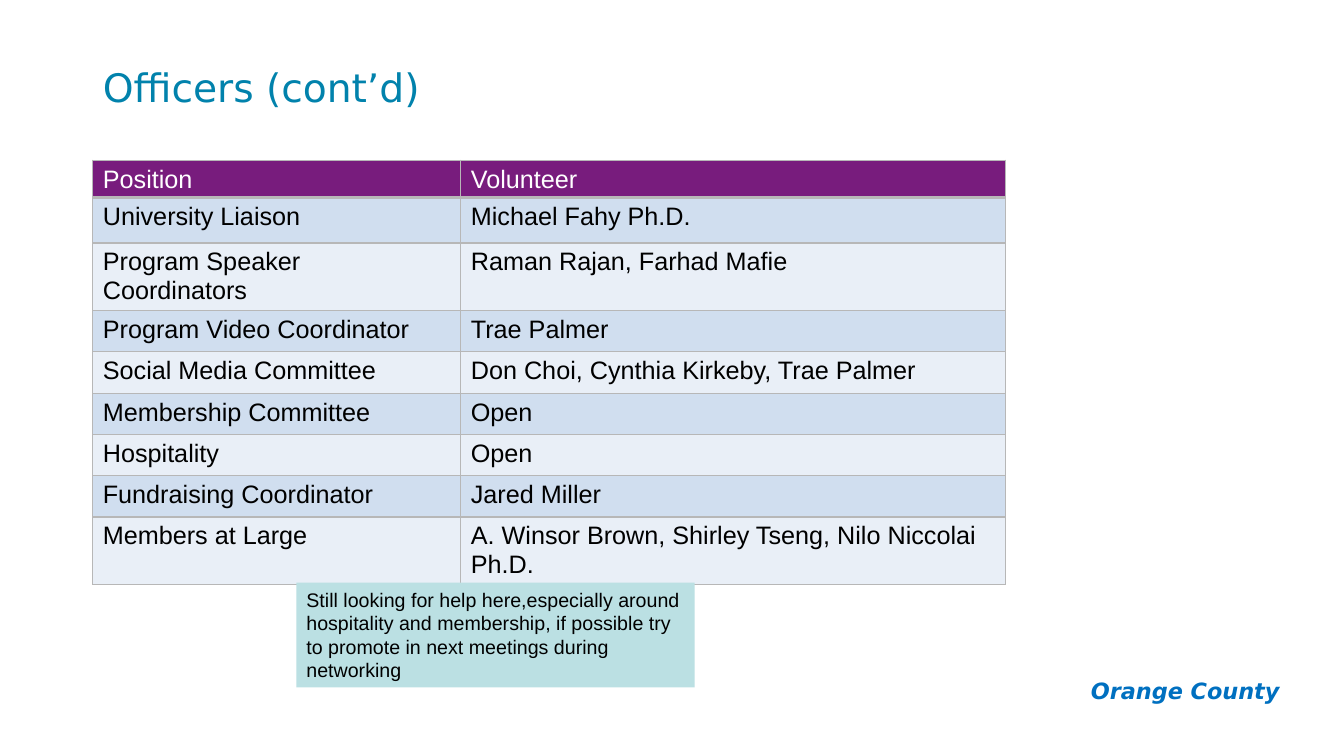
from lxml import etree
from pptx import Presentation
from pptx import util as u
from pptx.dml.color import RGBColor
from pptx.enum import shapes, text
from pptx.oxml import ns

WHITE = RGBColor(0xFF, 0xFF, 0xFF)
BLACK = RGBColor(0x00, 0x00, 0x00)
TEAL = RGBColor(0x01, 0x82, 0xAC)
BLUE = RGBColor(0x00, 0x70, 0xC0)
PURPLE = RGBColor(0x78, 0x1C, 0x7D)
BANDS = RGBColor(0xD0, 0xDE, 0xEF), RGBColor(0xE9, 0xEF, 0xF7)
NOTE_FILL = RGBColor(0xBB, 0xE0, 0xE3)
BORDER = RGBColor(0xB7, 0xB7, 0xB7)

LEFT = 0.92
COLUMN_WIDTHS = 3.65, 5.4
ROW_HEIGHTS = [0.36] + [0.45] * 2 + [0.41] * 6
CELL_BOTTOM_MARGIN = 0.02  # keeps the two-line rows clear of the note below
OFFICERS = [
    ("Position", "Volunteer"),
    ("University Liaison", "Michael Fahy Ph.D."),
    ("Program Speaker Coordinators", "Raman Rajan, Farhad Mafie"),
    ("Program Video Coordinator", "Trae Palmer"),
    ("Social Media Committee", "Don Choi, Cynthia Kirkeby, Trae Palmer"),
    ("Membership Committee", "Open"),
    ("Hospitality", "Open"),
    ("Fundraising Coordinator", "Jared Miller"),
    ("Members at Large", "A. Winsor Brown, Shirley Tseng, Nilo Niccolai Ph.D."),
]


def inches(box):
    return [u.Inches(length) for length in box]


def write(frame, words, size, font_name, color, align=text.PP_ALIGN.LEFT):
    """Fill a text frame with one formatted paragraph and return it."""
    frame.text = words
    frame.word_wrap = True
    paragraph = frame.paragraphs[0]
    paragraph.alignment = align
    font = paragraph.runs[0].font
    font.size, font.name, font.color.rgb = u.Pt(size), font_name, color
    return paragraph


def add_title(slide, box):
    title = slide.shapes.title
    title.left, title.top, title.width, title.height = inches(box)
    frame = title.text_frame
    frame.auto_size = text.MSO_AUTO_SIZE.NONE
    frame.vertical_anchor = text.MSO_ANCHOR.MIDDLE
    write(frame, "Officers (cont’d)", 28, "DejaVu Sans", TEAL).line_spacing = 0.9


def set_borders(cell, widths):
    """Draw the cell's borders; widths maps L, R, T, B (in that order) to points."""
    properties = cell._tc.get_or_add_tcPr()
    for side, width in widths.items():
        line = etree.SubElement(properties, ns.qn(f"a:ln{side}"), w=str(u.Pt(width)))
        fill = etree.SubElement(line, ns.qn("a:solidFill"))
        etree.SubElement(fill, ns.qn("a:srgbClr"), val=str(BORDER))


def add_officers_table(slide, left, top):
    box = left, top, sum(COLUMN_WIDTHS), sum(ROW_HEIGHTS)
    table = slide.shapes.add_table(
        len(OFFICERS), len(COLUMN_WIDTHS), *inches(box)).table
    table.first_row = table.horz_banding = False
    for column, width in zip(table.columns, COLUMN_WIDTHS):
        column.width = u.Inches(width)
    for r, (officer, height) in enumerate(zip(OFFICERS, ROW_HEIGHTS)):
        table.rows[r].height = u.Inches(height)
        header = r == 0
        for c, words in enumerate(officer):
            cell = table.cell(r, c)
            cell.margin_bottom = u.Inches(CELL_BOTTOM_MARGIN)
            set_borders(cell, {"L": 1, "R": 1, "T": 3 if r == 1 else 1,
                               "B": 3 if header else 1})
            cell.fill.solid()
            cell.fill.fore_color.rgb = PURPLE if header else BANDS[(r - 1) % 2]
            write(cell.text_frame, words, 18, "Arial", WHITE if header else BLACK)


def add_note(slide, box):
    note = slide.shapes.add_shape(shapes.MSO_SHAPE.RECTANGLE, *inches(box))
    note.shadow.inherit = False
    note.fill.solid()
    note.fill.fore_color.rgb = NOTE_FILL
    note.line.fill.background()
    note.text_frame.vertical_anchor = text.MSO_ANCHOR.TOP
    write(note.text_frame,
          "Still looking for help here,especially around hospitality and membership, "
          "if possible try to promote in next meetings during networking",
          14, "Arial", BLACK)


def add_chapter_name(slide, box):
    frame = slide.shapes.add_textbox(*inches(box)).text_frame
    frame.margin_top = frame.margin_bottom = u.Inches(0.1)
    paragraph = write(frame, "Orange County", 16, "DejaVu Sans", BLUE,
                      text.PP_ALIGN.RIGHT)
    font = paragraph.runs[0].font
    font.bold = font.italic = True


def main():
    deck = Presentation()
    deck.slide_width, deck.slide_height = inches((13.33, 7.5))
    slide = deck.slides.add_slide(deck.slide_layouts.get_by_name("Title Only"))
    add_chapter_name(slide, (10.51, 6.62, 2.28, 0.47))
    add_title(slide, (LEFT, 0.4, 11.5, 0.99))
    add_officers_table(slide, LEFT, 1.59)
    add_note(slide, (2.94, 5.78, 3.95, 1.04))
    deck.save("out.pptx")


if __name__ == "__main__":
    main()
